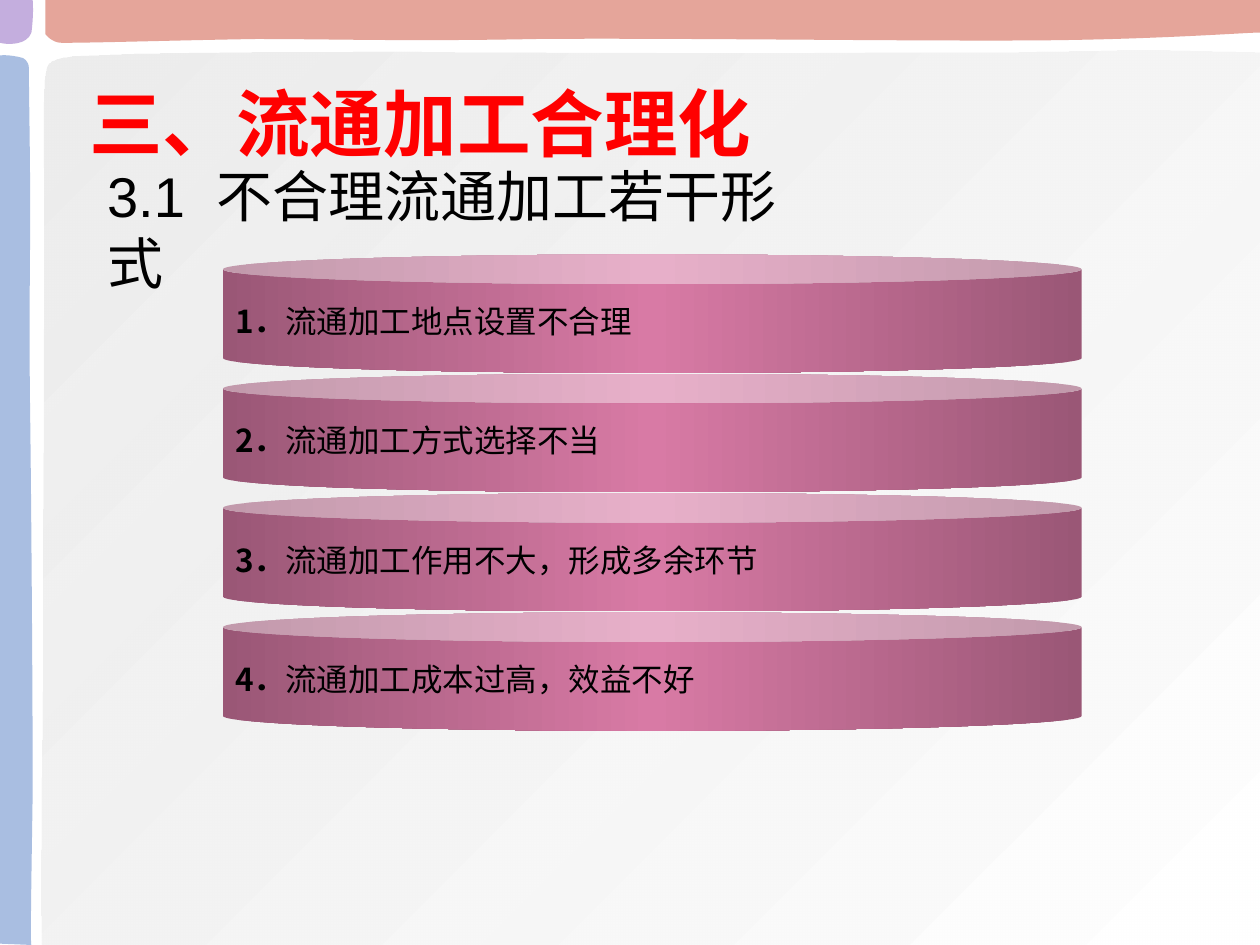
from dataclasses import dataclass

from lxml.etree import SubElement
from pptx import Presentation
from pptx.dml.color import RGBColor
from pptx.enum.shapes import MSO_SHAPE
from pptx.enum.text import MSO_ANCHOR, MSO_AUTO_SIZE, PP_ALIGN
from pptx.oxml.ns import qn
from pptx.util import Inches, Pt

# Grid of 1000 columns by 750 rows over the slide
COLUMNS, ROWS = 1000, 750
CELL = Inches(10) // COLUMNS


@dataclass(frozen=True)
class Tint:
    """A colour with optional shade and alpha, in percent."""
    colour: str
    shade: float = 100
    alpha: float = 100


@dataclass(frozen=True)
class Theme:
    latin: str = "Arial"
    chinese: str = "Noto Sans CJK SC"
    title: str = "FF0000"
    text: str = "000000"
    panel: tuple = (Tint("E6E6E6", alpha=70), Tint("FFFFFF"))
    can: tuple = (Tint("D87AA5", shade=46.27), Tint("D87AA5"), Tint("D87AA5", shade=46.27))
    top_band: tuple = (Tint("DA7F70", alpha=70),)
    side_band: tuple = (Tint("85A3D5", alpha=70),)
    corner: tuple = (Tint("AC8CD0", alpha=70),)
    title_size: int = 42
    subtitle_size: int = 32
    item_size: int = 18


THEME = Theme()


@dataclass(frozen=True)
class Band:
    """A start point, then segments: 2 numbers for a line, 6 for a curve."""
    tints: tuple
    start: tuple
    segments: tuple


BANDS = (
    # Main panel
    Band(THEME.panel, (1000, 750), (
        (1000, 42), (886, 38, 855, 42, 760, 42), (666, 42, 550, 43, 433, 42),
        (316, 41, 123, 41, 57, 45), (36, 48, 36, 49, 35, 73),
        (34, 96, 35, 110, 35, 182), (35, 256, 34, 412, 34, 506),
        (34, 601, 32, 662, 33, 750), (517, 750, 1000, 750, 1000, 750))),
    # Top band
    Band(THEME.top_band, (1000, 0), (
        (1000, 26), (1001, 25, 928, 31, 832, 32), (736, 33, 531, 30, 426, 31),
        (321, 33, 265, 31, 203, 31), (140, 32, 77, 34, 49, 34),
        (41, 34, 36, 27, 36, 27), (36, 27, 36, 14, 36, 0), (1000, 0))),
    # Side band
    Band(THEME.side_band, (0, 749), (
        (25, 750), (24, 751, 25, 698, 26, 628), (26, 558, 25, 407, 24, 330),
        (23, 254, 24, 212, 24, 167), (24, 121, 23, 75, 23, 54),
        (23, 48, 18, 46, 18, 46), (7, 43, 0, 44, 0, 44), (0, 749))),
    # Corner
    Band(THEME.corner, (0, 0), (
        (26, 0), (27, 12, 25, 26, 25, 26), (23, 31, 19, 33, 15, 34),
        (7, 36, 0, 34, 0, 34), (0, 0))),
)

ITEMS = ("流通加工地点设置不合理", "流通加工方式选择不当",
         "流通加工作用不大，形成多余环节", "流通加工成本过高，效益不好")


def set_values(target, values: dict) -> None:
    for name, value in values.items():
        setattr(target, name, value)


def place(box, left: float, top: float, width: float, height: float) -> None:
    set_values(box, {name: round(value * CELL) for name, value in
                     zip(("left", "top", "width", "height"), (left, top, width, height))})


def add_tint(parent, tint: Tint) -> None:
    colour = SubElement(parent, qn("a:srgbClr"), val=tint.colour)
    for name, percent in (("a:shade", tint.shade), ("a:alpha", tint.alpha)):
        if percent < 100:
            SubElement(colour, qn(name), val=str(round(percent * 1000)))


def paint(shape, tints: tuple, angle: int = 0) -> None:
    """Fill with one tint or with evenly spaced stops; no line or shadow."""
    shape.shadow.inherit = False
    shape.line.fill.background()
    if len(tints) == 1:
        shape.fill.solid()
        add_tint(shape.element.spPr.find(qn("a:solidFill")), tints[0])
        return
    shape.fill.gradient()
    shape.fill.gradient_angle = -angle % 360
    stops = shape.element.spPr.find(".//" + qn("a:gsLst"))
    for stop in list(stops):
        stops.remove(stop)
    for index, tint in enumerate(tints):
        position = 100000 * index // (len(tints) - 1)
        add_tint(SubElement(stops, qn("a:gs"), pos=str(position)), tint)


def draw_band(page, band: Band) -> None:
    ends = [segment[-2:] for segment in band.segments]
    left, top = (min(values) for values in zip(band.start, *ends))
    builder = page.shapes.build_freeform(*band.start, scale=CELL)
    builder.add_line_segments(ends, close=True)
    shape = builder.convert_to_shape()
    # Bend the straight segments that have control points
    lines = list(shape.element.spPr.iter(qn("a:lnTo")))
    for line, segment in zip(lines, band.segments):
        if len(segment) == 6:
            line.tag = qn("a:cubicBezTo")
            line.remove(line[0])
            for x, y in zip(segment[::2], segment[1::2]):
                SubElement(line, qn("a:pt"), x=str(x - left), y=str(y - top))
    paint(shape, band.tints, 45)


def add_span(para, text: str, size: int, colour: str, bold: bool = False,
             font: str = THEME.latin) -> None:
    span = para.add_run()
    span.text = text
    set_values(span.font, {"size": Pt(size), "bold": bold, "name": font})
    span.font.color.rgb = RGBColor.from_string(colour)
    SubElement(span.font._element, qn("a:ea"), typeface=THEME.chinese)


def prepare_text(box, anchor, wrap: bool = True):
    """Set up left-aligned text and return its first paragraph."""
    frame = box.text_frame
    set_values(frame, {"word_wrap": wrap, "vertical_anchor": anchor,
                       "auto_size": MSO_AUTO_SIZE.NONE})
    para = frame.paragraphs[0]
    set_values(para, {"alignment": PP_ALIGN.LEFT, "space_before": Pt(0)})
    return para


def draw_can(page, index: int, text: str) -> None:
    can = page.shapes.add_shape(MSO_SHAPE.CAN, 0, 0, CELL, CELL)
    place(can, 177, 202 + 94.67 * index, 681.5, 94)
    can.adjustments[0] = 0.25
    paint(can, THEME.can)
    para = prepare_text(can, MSO_ANCHOR.MIDDLE, wrap=False)
    add_span(para, f"{index + 1}．", THEME.item_size, THEME.text, True, THEME.chinese)
    add_span(para, text, THEME.item_size, THEME.text)


def main() -> None:
    deck = Presentation()
    set_values(deck, {"slide_width": COLUMNS * CELL, "slide_height": ROWS * CELL})
    page = deck.slides.add_slide(deck.slide_layouts[1])
    title, subtitle = page.shapes.title, page.placeholders[1]

    # Background bands and list
    for band in BANDS:
        draw_band(page, band)
    for index, text in enumerate(ITEMS):
        draw_can(page, index, text)

    # Headings, raised above the background
    for box in (title, subtitle):
        box.element.getparent().append(box.element)
    place(title, 61, 45, 736, 103)
    add_span(prepare_text(title, MSO_ANCHOR.MIDDLE), "三、流通加工合理化",
             THEME.title_size, THEME.title, True)
    place(subtitle, 75, 123, 595, 64)
    para = prepare_text(subtitle, MSO_ANCHOR.TOP)
    add_span(para, "3.1  不合理流通加工若干形式", THEME.subtitle_size, THEME.text)
    properties = para._p.get_or_add_pPr()
    for name in ("marL", "indent"):
        properties.set(name, "0")
    SubElement(properties, qn("a:buNone"))

    deck.save("out.pptx")


if __name__ == "__main__":
    main()
